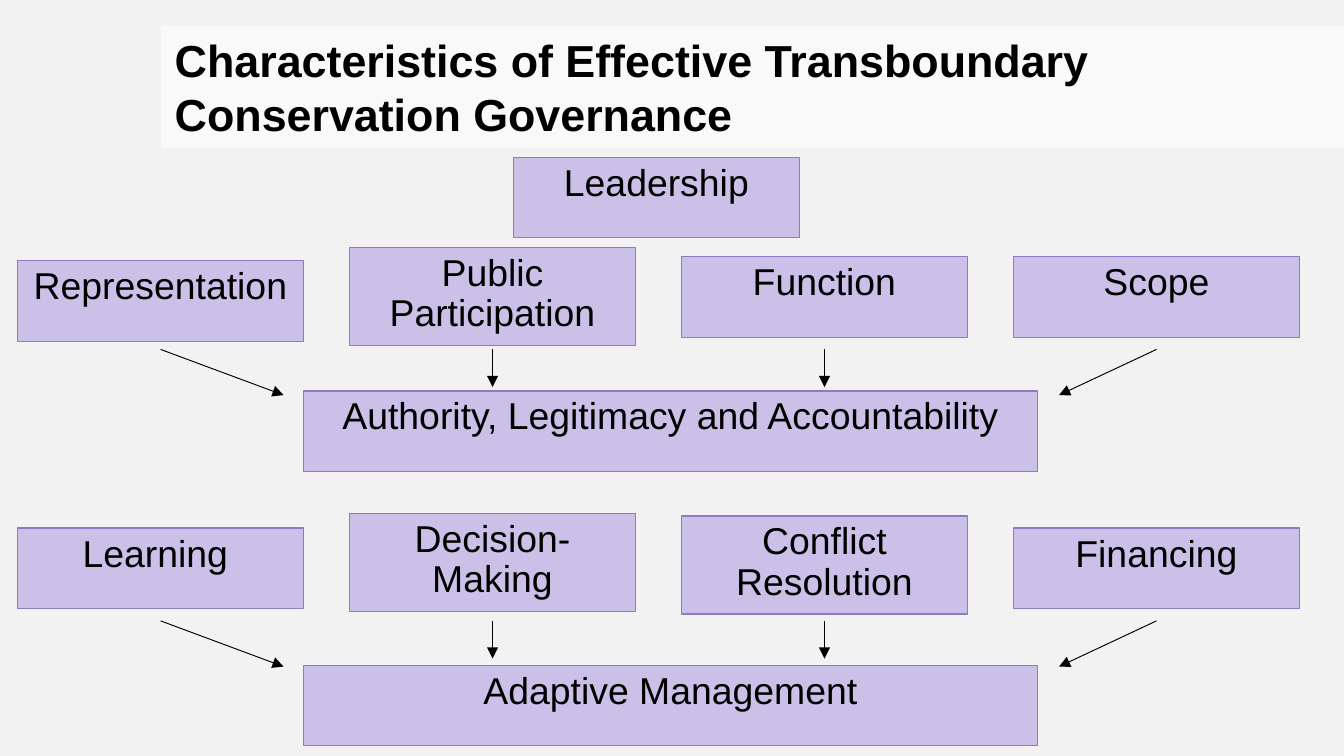
"""Build a slide on the characteristics of effective transboundary conservation governance."""
from dataclasses import dataclass

from lxml.etree import SubElement
from pptx import Presentation
from pptx.dml.color import RGBColor
from pptx.enum.shapes import MSO_CONNECTOR, MSO_SHAPE
from pptx.enum.text import MSO_ANCHOR, MSO_AUTO_SIZE, PP_ALIGN
from pptx.oxml.ns import qn
from pptx.shapes.autoshape import Shape
from pptx.slide import Slide
from pptx.util import Inches, Pt


@dataclass(frozen=True)
class Theme:
    font: str = "Arial"
    title_size: int = 24
    label_size: int = 20
    background: str = "F2F2F2"
    text: str = "000000"
    title_fill: str = "FFFFFF"
    title_opacity: int = 55
    box_fill: str = "C0B2E5"
    box_opacity: int = 76
    box_line: str = "8E7CC3"
    box_line_width: float = 0.75
    arrow_width: float = 0.5


@dataclass(frozen=True)
class Grid:
    left: float = 0.13
    pitch: float = 2.47
    box_width: float = 2.13
    single_height: float = 0.6
    double_height: float = 0.73
    bar_left: float = 2.26
    bar_width: float = 5.46

    def column_left(self, column: int) -> float:
        return self.left + column * self.pitch

    def column_center(self, column: int) -> float:
        return self.column_left(column) + self.box_width / 2


@dataclass(frozen=True)
class Box:
    label: str
    left: float
    top: float
    width: float
    height: float


@dataclass(frozen=True)
class Factor:
    label: str
    top: float
    two_lines: bool = False


@dataclass(frozen=True)
class Group:
    factors: tuple[Factor, ...]
    arrow_top: float
    outcome: str
    outcome_top: float


THEME = Theme()
GRID = Grid()
TITLE = Box("Characteristics of Effective Transboundary Conservation Governance", 1.2, 0.19, 8.8, 0.91)
LEADERSHIP = Box("Leadership", 3.82, 1.17, GRID.box_width, GRID.single_height)
GROUPS = (
    Group(
        (
            Factor("Representation", 1.94),
            Factor("Public Participation", 1.84, True),
            Factor("Function", 1.91),
            Factor("Scope", 1.91),
        ),
        2.6,
        "Authority, Legitimacy and Accountability",
        2.91,
    ),
    Group(
        (
            Factor("Learning ", 3.93),
            Factor("Decision-Making", 3.82, True),
            Factor("Conflict Resolution", 3.84, True),
            Factor("Financing", 3.93),
        ),
        4.62,
        "Adaptive Management",
        4.95,
    ),
)
ARROW_ENDS = ((2.11, 0.34), (GRID.column_center(1), 0.28), (GRID.column_center(2), 0.28), (7.88, 0.34))


def color(value: str) -> RGBColor:
    """Turn a hexadecimal value into a colour."""
    return RGBColor.from_string(value)


def fill_shape(shape: Shape, value: str, opacity: int) -> None:
    """Give a shape a partly transparent solid fill."""
    shape.fill.solid()
    shape.fill.fore_color.rgb = color(value)
    solid = shape.element.spPr.find(qn("a:solidFill"))
    SubElement(solid[0], qn("a:alpha"), val=str(opacity * 1000))


def write_text(shape: Shape, text: str, size: int, alignment: PP_ALIGN, spacing: float, bold: bool) -> None:
    """Write one formatted paragraph in a shape."""
    shape.text_frame.word_wrap = True
    paragraph = shape.text_frame.paragraphs[0]
    paragraph.text = text
    paragraph.alignment = alignment
    paragraph.line_spacing = spacing
    paragraph.space_before = Pt(0)
    paragraph.font.name = THEME.font
    paragraph.font.size = Pt(size)
    paragraph.font.bold = bold
    paragraph.font.color.rgb = color(THEME.text)


def draw_title(slide: Slide) -> None:
    """Place and format the title placeholder."""
    title = slide.shapes.title
    title.left, title.top = Inches(TITLE.left), Inches(TITLE.top)
    title.width, title.height = Inches(TITLE.width), Inches(TITLE.height)
    fill_shape(title, THEME.title_fill, THEME.title_opacity)
    write_text(title, TITLE.label, THEME.title_size, PP_ALIGN.LEFT, 1.0, True)
    title.text_frame.auto_size = MSO_AUTO_SIZE.SHAPE_TO_FIT_TEXT


def draw_box(slide: Slide, box: Box) -> None:
    """Draw one labelled rectangle."""
    shape = slide.shapes.add_shape(
        MSO_SHAPE.RECTANGLE, Inches(box.left), Inches(box.top), Inches(box.width), Inches(box.height)
    )
    shape.shadow.inherit = False
    fill_shape(shape, THEME.box_fill, THEME.box_opacity)
    shape.line.color.rgb = color(THEME.box_line)
    shape.line.width = Pt(THEME.box_line_width)
    shape.text_frame.vertical_anchor = MSO_ANCHOR.TOP
    write_text(shape, box.label, THEME.label_size, PP_ALIGN.CENTER, 0.9, False)


def draw_arrow(slide: Slide, start: tuple[float, float], end: tuple[float, float]) -> None:
    """Draw a thin arrow between two points."""
    points = (Inches(value) for value in (*start, *end))
    arrow = slide.shapes.add_connector(MSO_CONNECTOR.STRAIGHT, *points)
    arrow.line.color.rgb = color(THEME.text)
    arrow.line.width = Pt(THEME.arrow_width)
    properties = arrow.element.spPr
    SubElement(properties.find(qn("a:ln")), qn("a:tailEnd"), type="triangle")
    SubElement(properties, qn("a:effectLst"))


def draw_group(slide: Slide, group: Group) -> None:
    """Draw a row of factors with arrows to their outcome."""
    for column, (factor, (end, drop)) in enumerate(zip(group.factors, ARROW_ENDS)):
        height = GRID.double_height if factor.two_lines else GRID.single_height
        draw_box(slide, Box(factor.label, GRID.column_left(column), factor.top, GRID.box_width, height))
        start = (GRID.column_center(column), group.arrow_top)
        draw_arrow(slide, start, (end, group.arrow_top + drop))
    draw_box(slide, Box(group.outcome, GRID.bar_left, group.outcome_top, GRID.bar_width, GRID.single_height))


def main() -> None:
    """Build and save the presentation."""
    presentation = Presentation()
    presentation.slide_width = Inches(10)
    presentation.slide_height = presentation.slide_width * 9 // 16
    slide = presentation.slides.add_slide(presentation.slide_layouts[5])
    slide.background.fill.solid()
    slide.background.fill.fore_color.rgb = color(THEME.background)
    draw_title(slide)
    draw_box(slide, LEADERSHIP)
    for group in GROUPS:
        draw_group(slide, group)
    presentation.save("out.pptx")


if __name__ == "__main__":
    main()
